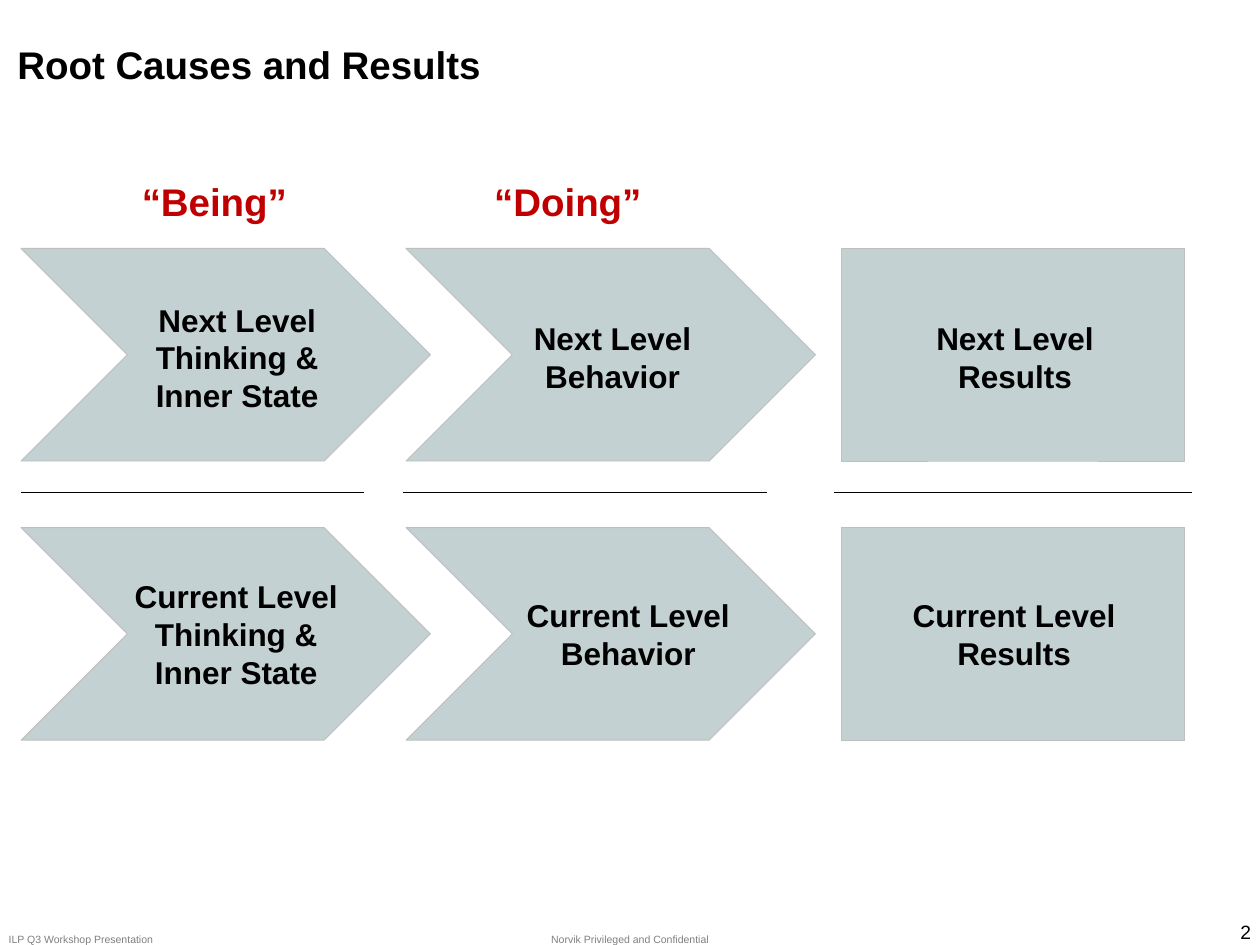
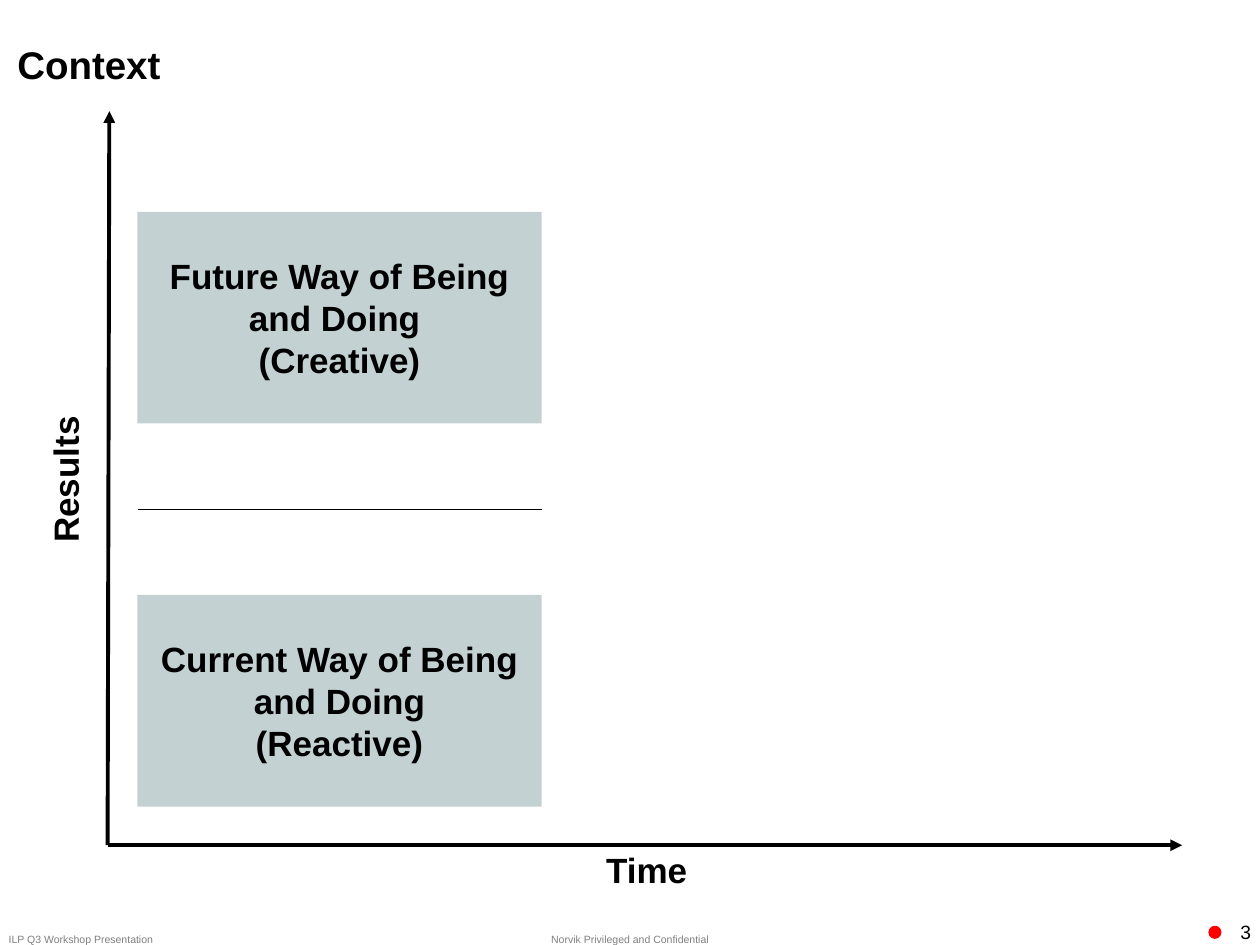
from lxml.etree import SubElement
from pptx import Presentation
from pptx.dml.color import RGBColor
from pptx.enum.shapes import MSO_CONNECTOR, MSO_SHAPE
from pptx.enum.text import MSO_ANCHOR, PP_ALIGN
from pptx.oxml.ns import qn
from pptx.util import Pt

COLORS = {
    "text": "000000",
    "heading": "C00000",
    "panel": "C3D1D3",
    "outline": "BFBFBF",
    "footer": "808080",
    "marker": "FF0000",
}
FONT = "Arial"
BLANK_LAYOUT = 6
TITLE_MARGINS = (0, 3.6)
LABEL_MARGINS = (6.6, 3.6)


def color(name):
    return RGBColor.from_string(COLORS[name])


def write(shape, text, size, color_name="text", bold=True, align=PP_ALIGN.CENTER,
          anchor=MSO_ANCHOR.TOP, margins=(7.2, 3.6)):
    """Fill the shape with text; margins are (horizontal, vertical)."""
    frame = shape.text_frame
    frame.word_wrap = True
    frame.vertical_anchor = anchor
    frame.margin_left = frame.margin_right = Pt(margins[0])
    frame.margin_top = frame.margin_bottom = Pt(margins[1])
    frame.text = text
    for paragraph in frame.paragraphs:
        paragraph.alignment = align
        for run in paragraph.runs:
            run.font.name = FONT
            run.font.size = Pt(size)
            run.font.bold = bold
            run.font.color.rgb = color(color_name)


def add_text(shapes, box, text, size, **style):
    text_box = shapes.add_textbox(*map(Pt, box))
    write(text_box, text, size, **style)
    return text_box


def add_panel(shapes, kind, box, fill="panel", outline=None):
    panel = shapes.add_shape(kind, *map(Pt, box))
    panel.shadow.inherit = False
    panel.fill.solid()
    panel.fill.fore_color.rgb = color(fill)
    if outline:
        panel.line.color.rgb = color(outline)
        panel.line.width = Pt(0.5)
    else:
        panel.line.fill.background()
    return panel


def add_line(shapes, start, end, width=0.75, arrow=False):
    line = shapes.add_connector(MSO_CONNECTOR.STRAIGHT, *map(Pt, start + end))
    line.line.color.rgb = color("text")
    line.line.width = Pt(width)
    properties = line._element.spPr
    if arrow:
        SubElement(properties.find(qn("a:ln")), qn("a:tailEnd"), type="triangle")
    SubElement(properties, qn("a:effectLst"))


def add_base_slide(presentation, title, number):
    """Add a slide with its title, footers and page number."""
    slide = presentation.slides.add_slide(presentation.slide_layouts[BLANK_LAYOUT])
    shapes = slide.shapes
    add_text(shapes, (10, 20, 703.5, 33), title, 22,
             align=PP_ALIGN.LEFT, margins=TITLE_MARGINS)
    footer = {"color_name": "footer", "bold": False, "margins": (0, 0)}
    add_text(shapes, (5, 533, 216, 7), "ILP Q3 Workshop Presentation", 6,
             align=PP_ALIGN.LEFT, **footer)
    add_text(shapes, (304.5, 533, 111, 7), "Norvik Privileged and Confidential", 6, **footer)
    add_text(shapes, (643, 525, 79, 14.5), str(number), 11, bold=False,
             align=PP_ALIGN.RIGHT, anchor=MSO_ANCHOR.MIDDLE)
    return slide


def add_stage(shapes, kind, box, text, label_left, line_count, label_drop):
    """Group a panel with its label, centred vertically apart from label_drop."""
    left, top, width, height = box
    group = shapes.add_group_shape().shapes
    add_panel(group, kind, box, outline="outline")
    label_height = 21.6 * line_count + 7.2
    label_top = top + (height - label_height) / 2 + label_drop
    add_text(group, (left + label_left, label_top, 132, label_height), text, 18,
             margins=LABEL_MARGINS)


def add_causes_slide(presentation):
    shapes = add_base_slide(presentation, "Root Causes and Results", 2).shapes

    for heading, left in (("“Being”", 44), ("“Doing”", 246)):
        add_text(shapes, (left, 98, 157, 45), heading, 22, color_name="heading",
                 margins=TITLE_MARGINS)

    # name, shape, left, width, label lines, divider from and to
    columns = (
        ("Thinking & Inner State", MSO_SHAPE.CHEVRON, 12, 234, 3, 12, 208),
        ("Behavior", MSO_SHAPE.CHEVRON, 232, 234, 2, 230.5, 438.5),
        ("Results", MSO_SHAPE.RECTANGLE, 481, 196, 2, 476.5, 681),
    )
    # name, top, label drop, label offset in each column
    rows = (
        ("Next", 142, 1.5, (57.5, 52, 33)),
        ("Current", 301.5, 0, (57, 61, 32.5)),
    )
    for index, (name, kind, left, width, lines, start, end) in enumerate(columns):
        add_line(shapes, (start, 281.5), (end, 281.5))
        for level, top, drop, label_lefts in rows:
            add_stage(shapes, kind, (left, top, width, 121.5), f"{level} Level {name}",
                      label_lefts[index], lines, drop)


def add_axes(shapes, box):
    left, top, width, height = box
    bottom = top + height
    add_line(shapes, (left, bottom), (left + width, bottom), 2.25, arrow=True)
    add_line(shapes, (left, bottom), (left + 1, top), 2.25, arrow=True)
    add_text(shapes, (left + 218.5, bottom - 1.5, 179, 31), "Time", 20, margins=LABEL_MARGINS)
    results = add_text(shapes, (left - 114, top + 195, 179, 31), "Results", 20,
                       margins=LABEL_MARGINS)
    results.rotation = 270


def add_context_slide(presentation):
    shapes = add_base_slide(presentation, "Context", 3).shapes
    add_panel(shapes, MSO_SHAPE.OVAL, (690.5, 529, 7.5, 7.5), fill="marker")
    add_axes(shapes, (61.5, 63.5, 614, 419.5))

    left, width = 78.5, 231
    ways = (
        ("Future Way of Being and Doing \n(Creative)", 121),
        ("Current Way of Being and Doing\n(Reactive)", 340),
    )
    for text, top in ways:
        panel = add_panel(shapes, MSO_SHAPE.RECTANGLE, (left, top, width, 121))
        write(panel, text, 20, anchor=MSO_ANCHOR.MIDDLE)
    add_line(shapes, (left + 0.5, 291), (left + width, 291))


def main():
    presentation = Presentation()
    presentation.slide_width = Pt(720)
    presentation.slide_height = Pt(540)
    add_causes_slide(presentation)
    add_context_slide(presentation)
    presentation.save("out.pptx")


if __name__ == "__main__":
    main()
